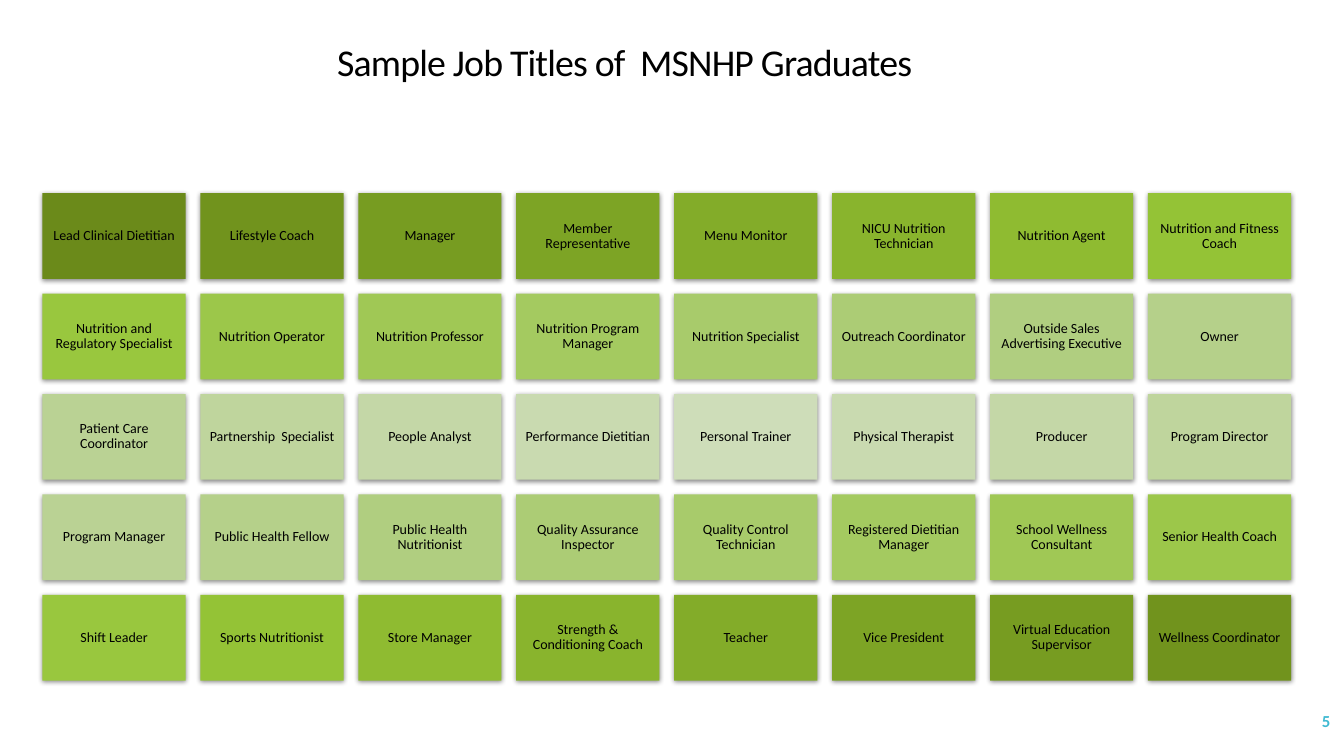
from lxml.etree import SubElement
from pptx import Presentation
from pptx.dml.color import RGBColor
from pptx.enum.shapes import MSO_SHAPE
from pptx.enum.text import MSO_ANCHOR, PP_ALIGN
from pptx.oxml.ns import qn
from pptx.util import Cm, Pt

TITLE = "Sample Job Titles of  MSNHP Graduates"
PAGE_NUMBER = "5"
JOBS = [
    ["Lead Clinical Dietitian", "Lifestyle Coach", "Manager", "Member Representative",
     "Menu Monitor", "NICU Nutrition Technician", "Nutrition Agent",
     "Nutrition and Fitness Coach"],
    ["Nutrition and Regulatory Specialist", "Nutrition Operator", "Nutrition Professor",
     "Nutrition Program Manager", "Nutrition Specialist", "Outreach Coordinator",
     "Outside Sales Advertising Executive", "Owner"],
    ["Patient Care Coordinator", "Partnership  Specialist", "People Analyst",
     "Performance Dietitian", "Personal Trainer", "Physical Therapist", "Producer",
     "Program Director"],
    ["Program Manager", "Public Health Fellow", "Public Health Nutritionist",
     "Quality Assurance Inspector", "Quality Control Technician",
     "Registered Dietitian Manager", "School Wellness Consultant", "Senior Health Coach"],
    ["Shift Leader", "Sports Nutritionist", "Store Manager",
     "Strength & Conditioning Coach", "Teacher", "Vice President",
     "Virtual Education Supervisor", "Wellness Coordinator"],
]
COLORS = {
    "text": "000000",
    "number": "40BAD2",
    "shadow": "000000",
    "greens": ["6B8A1A", "71931D", "779C21", "7DA425", "83AC29", "89B42D", "8FBB31",
               "94C336", "99C73E", "9CC74A", "A0C855", "A4CA60", "A8CB6B", "ACCC75",
               "B0CE80", "B5D08A", "BAD294", "BFD59D", "C4D7A7", "C9DAB0", "CEDDB9"],
}
FONT = "Calibri"
GRID_LEFT, GRID_TOP = 1.07, 4.87
CARD_W, CARD_H = 3.61, 2.16
STEP_X, STEP_Y = 3.98, 2.53
CARD_INSET = Cm(0.1)

CARD_FRAME = {"margin_left": CARD_INSET, "margin_right": CARD_INSET,
              "margin_top": CARD_INSET, "margin_bottom": CARD_INSET}
CARD_PARAGRAPH = {"alignment": PP_ALIGN.CENTER, "line_spacing": 0.9}
TITLE_PARAGRAPH = {"alignment": PP_ALIGN.CENTER, "line_spacing": 0.9}
NUMBER_PARAGRAPH = {"alignment": PP_ALIGN.RIGHT, "space_after": Pt(6)}


def apply(target, values):
    for name, value in values.items():
        setattr(target, name, value)


def write(sp, text, color, paragraph, font, frame=None):
    """Put one formatted, vertically centred paragraph in a shape; return its run."""
    tf = sp.text_frame
    apply(tf, {"word_wrap": True, "vertical_anchor": MSO_ANCHOR.MIDDLE, **(frame or {})})
    p = tf.paragraphs[0]
    apply(p, paragraph)
    r = p.add_run()
    r.text = text
    apply(r.font, {"name": FONT, **font})
    r.font.color.rgb = RGBColor.from_string(color)
    return r


def add_shadow(sp):
    sp.shadow.inherit = False
    effects = sp._element.spPr.find(qn("a:effectLst"))
    shadow = SubElement(effects, qn("a:outerShdw"), blurRad=str(Pt(3.5)),
                        dist=str(Pt(1.1)), dir="5400000", rotWithShape="0")
    color = SubElement(shadow, qn("a:srgbClr"), val=COLORS["shadow"])
    SubElement(color, qn("a:alpha"), val="45000")


def add_card(s, row, col, job):
    sp = s.shapes.add_shape(MSO_SHAPE.RECTANGLE,
                            Cm(GRID_LEFT + col * STEP_X), Cm(GRID_TOP + row * STEP_Y),
                            Cm(CARD_W), Cm(CARD_H))
    greens = COLORS["greens"]
    index = row * len(JOBS[0]) + col
    last = len(greens) - 1
    # The greens lighten up to the middle card, then darken again
    shade = greens[last - abs(last - index)]
    sp.fill.solid()
    sp.fill.fore_color.rgb = RGBColor.from_string(shade)
    sp.line.fill.background()
    add_shadow(sp)
    write(sp, job, COLORS["text"], CARD_PARAGRAPH, {"size": Pt(10)}, CARD_FRAME)


def main():
    prs = Presentation()
    prs.slide_width, prs.slide_height = Cm(33.87), Cm(19.05)
    s = prs.slides.add_slide(prs.slide_layouts[6])

    number = s.shapes.add_textbox(Cm(29.54), Cm(17.65), Cm(4.24), Cm(1.02))
    write(number, PAGE_NUMBER, COLORS["number"], NUMBER_PARAGRAPH,
          {"size": Pt(12), "bold": True})

    title = s.shapes.add_textbox(Cm(0), Cm(1.02), Cm(31.47), Cm(1.19))
    r = write(title, TITLE, COLORS["text"], TITLE_PARAGRAPH, {"size": Pt(27)})
    r.font._element.set("spc", "-60")

    for row, jobs in enumerate(JOBS):
        for col, job in enumerate(jobs):
            add_card(s, row, col, job)

    prs.save("out.pptx")


if __name__ == "__main__":
    main()
